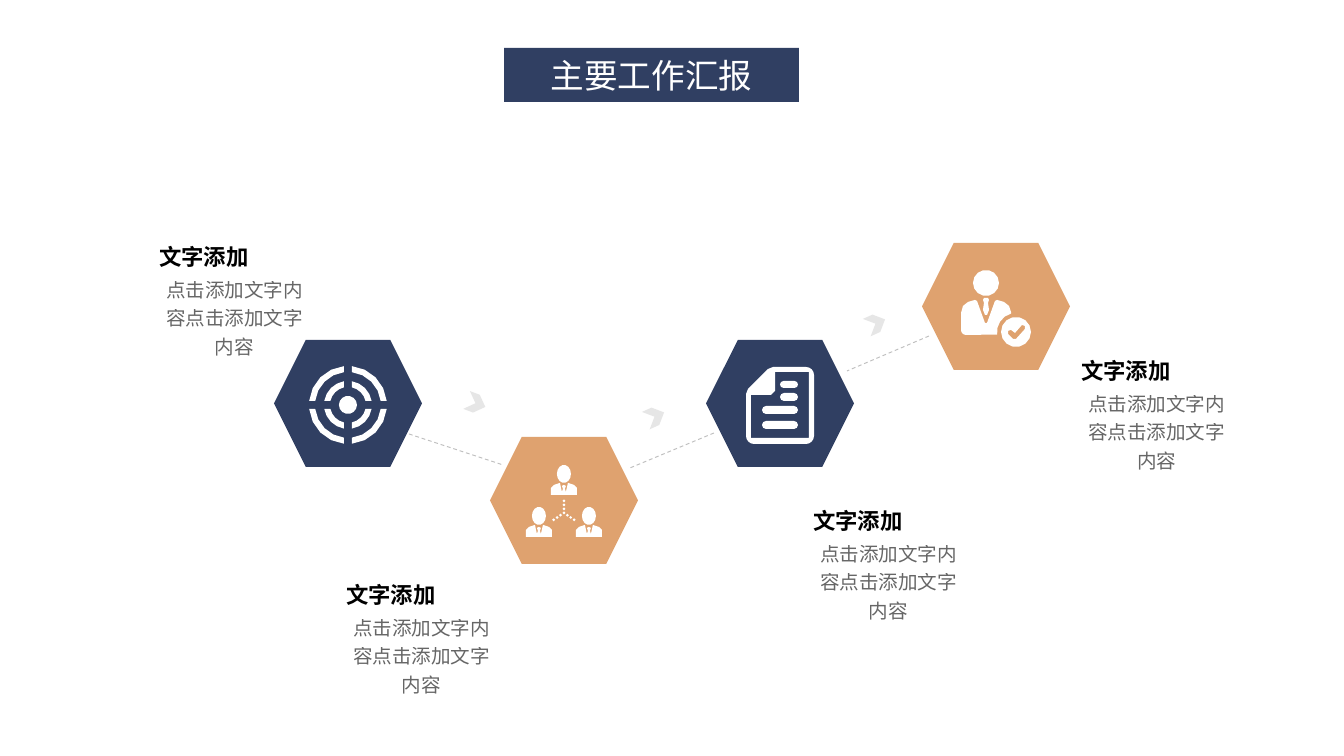
from math import asin, cos, degrees, radians, sin

from lxml import etree
from pptx import Presentation
from pptx.dml.color import RGBColor
from pptx.enum.dml import MSO_LINE
from pptx.enum.shapes import MSO_CONNECTOR, MSO_SHAPE
from pptx.enum.text import MSO_ANCHOR, MSO_AUTO_SIZE, PP_ALIGN
from pptx.oxml.ns import qn
from pptx.util import Pt

STRAIGHT = MSO_CONNECTOR.STRAIGHT
HEXAGON, CHEVRON = MSO_SHAPE.HEXAGON, MSO_SHAPE.CHEVRON
CENTER, JUSTIFY = PP_ALIGN.CENTER, PP_ALIGN.JUSTIFY
DASH = MSO_LINE.DASH

NAVY = RGBColor(0x30, 0x3F, 0x62)
SAND = RGBColor(0xDF, 0xA2, 0x6F)
WHITE = RGBColor(0xFF, 0xFF, 0xFF)
BLACK = RGBColor(0x00, 0x00, 0x00)
LINE_GREY = RGBColor(0xBF, 0xBF, 0xBF)
PALE_GREY = RGBColor(0xE6, 0xE6, 0xE6)

CJK_FONT = "Noto Sans CJK SC"
SCALE = 9144000 / 1344


def px(length):
    return round(length * SCALE)


def box_px(*lengths):
    return [px(length) for length in lengths]


def arc(cx, cy, rx, start, end, ry=None, steps=4):
    ry = ry or rx
    angles = [radians(start + (end - start) * i / steps) for i in range(steps + 1)]
    return [(cx + rx * cos(a), cy + ry * sin(a)) for a in angles]


def circle(cx, cy, r, ry=None, steps=14):
    return arc(cx, cy, r, 0, 360, ry, steps)[:-1]


def pill(x, y, w, h):
    r = h / 2
    return arc(x + w - r, y + r, r, -90, 90) + arc(x + r, y + r, r, 90, 270)


def ring_quarter(cx, cy, outer, inner, gap, turn):
    trim_outer, trim_inner = (degrees(asin(gap / r)) for r in (outer, inner))
    return (arc(cx, cy, outer, turn + trim_outer, turn + 90 - trim_outer)
            + arc(cx, cy, inner, turn + 90 - trim_inner, turn + trim_inner))


def target_icon():
    quarters = [ring_quarter(74, 65, outer, inner, 4, turn)
                for outer, inner in ((39, 33), (24, 18))
                for turn in (0, 90, 180, 270)]
    return quarters + [circle(74, 65, 9)]


def member(cx, top):
    half = [(0, 20), (2, 21), (1, 24), (2, 27), (4, 18), (10, 20), (13, 23), (13, 30)]
    body = half + [(-x, y) for x, y in reversed(half[1:])]
    return [circle(cx, top + 9, 7, 9), [(cx + x, top + y) for x, y in body]]


def team_icon():
    dots = [(74, 64 + 4 * i) for i in range(4)]
    dots += [(74 + side * 3.4 * i, 76 + 2.3 * i) for side in (-1, 1) for i in (1, 2, 3)]
    people = [part for spot in ((74, 28), (49, 70), (99, 70)) for part in member(*spot)]
    return people + [circle(x, y, 1.5, steps=4) for x, y in dots]


def document_icon():
    sheet = (arc(100, 35, 8, -90, 0) + arc(100, 96, 8, 0, 90) + arc(48, 96, 8, 90, 180)
             + [(40, 54), (42, 49), (62, 29), (67, 27)])
    inside = [(69, 32), (69, 51), (65, 55), (45, 55), (45, 98), (103, 98), (103, 32)]
    lines = [(74, 41, 18, 7), (74, 53, 18, 8), (56, 66, 36, 8), (56, 81, 36, 8)]
    return [sheet, inside] + [pill(*line) for line in lines]


def manager_icon():
    body = ([(53, 57), (55, 58), (63, 80), (65, 80), (73, 58), (75, 57), (82, 59), (87, 63), (89, 69)]
            + arc(94, 89, 19, 255, 172) + arc(44, 87, 5, 90, 180)
            + [(39, 70), (41, 63), (46, 59)])
    tie = [(62, 55), (66, 55), (67, 57), (66, 60), (67, 67), (65, 72),
           (63, 72), (61, 67), (62, 60), (61, 57)]
    check = [(100, 82), (93, 90), (89, 87), (86, 88), (86, 91), (91, 96),
             (94, 96), (103, 86), (103, 83)]
    return [circle(64, 40, 13), body, tie, circle(94, 89, 15), check]


def paint(shape, color):
    shape.fill.solid()
    shape.fill.fore_color.rgb = color
    shape.line.fill.background()
    shape.shadow.inherit = False


def add_icon(page, left, top, contours):
    outlines = [[(px(left + x), px(top + y)) for x, y in contour] for contour in contours]
    builder = page.shapes.build_freeform(*outlines[0][0])
    for i, outline in enumerate(outlines):
        if i:
            builder.move_to(*outline[0])
        builder.add_line_segments(outline[1:], close=True)
    paint(builder.convert_to_shape(), WHITE)


def add_step(page, left, top, color, contours):
    hexagon = page.shapes.add_shape(HEXAGON, *box_px(left, top, 148, 127))
    paint(hexagon, color)
    add_icon(page, left, top, contours)


def write(para, text, font, size, color):
    span = para.add_run()
    span.text = text
    span.font.name = font
    span.font.size = Pt(size)
    span.font.color.rgb = color
    east_asian = etree.SubElement(span.font._element, qn("a:ea"))
    east_asian.set("typeface", font)
    return span


def add_text(page, box, text, size, align):
    frame = page.shapes.add_textbox(*box_px(*box)).text_frame
    frame.word_wrap = True
    para = frame.paragraphs[0]
    para.alignment = align
    para.line_spacing = 1.2
    return write(para, text, CJK_FONT, size, BLACK)


def add_caption(page, left, top):
    detail = add_text(page, (left, top + 36, 177, 99), "点击添加文字内容点击添加文字内容", 10.5, CENTER)
    color = detail.font._element.find(".//" + qn("a:srgbClr"))
    etree.SubElement(color, qn("a:alpha")).set("val", "60000")
    heading = add_text(page, (left, top, 163, 46), "文字添加", 12, JUSTIFY)
    heading.font.bold = True


def add_title(page, left, top, width, height):
    title = page.shapes.title
    title.left, title.top, title.width, title.height = box_px(left, top, width, height)
    title.fill.solid()
    title.fill.fore_color.rgb = NAVY
    frame = title.text_frame
    frame.auto_size = MSO_AUTO_SIZE.NONE
    frame.vertical_anchor = MSO_ANCHOR.MIDDLE
    para = frame.paragraphs[0]
    para.alignment = CENTER
    write(para, "主要工作汇报", "Arial", 18, WHITE)


def add_link(page, *ends):
    link = page.shapes.add_connector(STRAIGHT, *box_px(*ends))
    link.line.color.rgb = LINE_GREY
    link.line.width = Pt(0.5)
    link.line.dash_style = DASH
    etree.SubElement(link._element.spPr, qn("a:effectLst"))


def add_chevron(page, left, top, angle):
    chevron = page.shapes.add_shape(CHEVRON, *box_px(left, top, 20, 19))
    chevron.rotation = angle
    paint(chevron, PALE_GREY)


def main():
    deck = Presentation()
    deck.slide_width, deck.slide_height = box_px(1344, 756)
    page = deck.slides.add_slide(deck.slide_layouts[5])
    add_title(page, 504, 48, 295, 54)
    for ends in ((409, 434, 503, 465), (714, 433, 630, 468), (929, 336, 847, 371)):
        add_link(page, *ends)
    for place in ((466, 394, 20.6), (645, 407, 335.8), (866, 314, 335.8)):
        add_chevron(page, *place)
    for corner in ((146, 231), (333, 569), (800, 495), (1068, 345)):
        add_caption(page, *corner)
    icons = (target_icon(), team_icon(), document_icon(), manager_icon())
    for i, (top, icon) in enumerate(zip((340, 437, 340, 243), icons)):
        add_step(page, 274 + 216 * i, top, SAND if i % 2 else NAVY, icon)
    deck.save("out.pptx")


if __name__ == "__main__":
    main()
